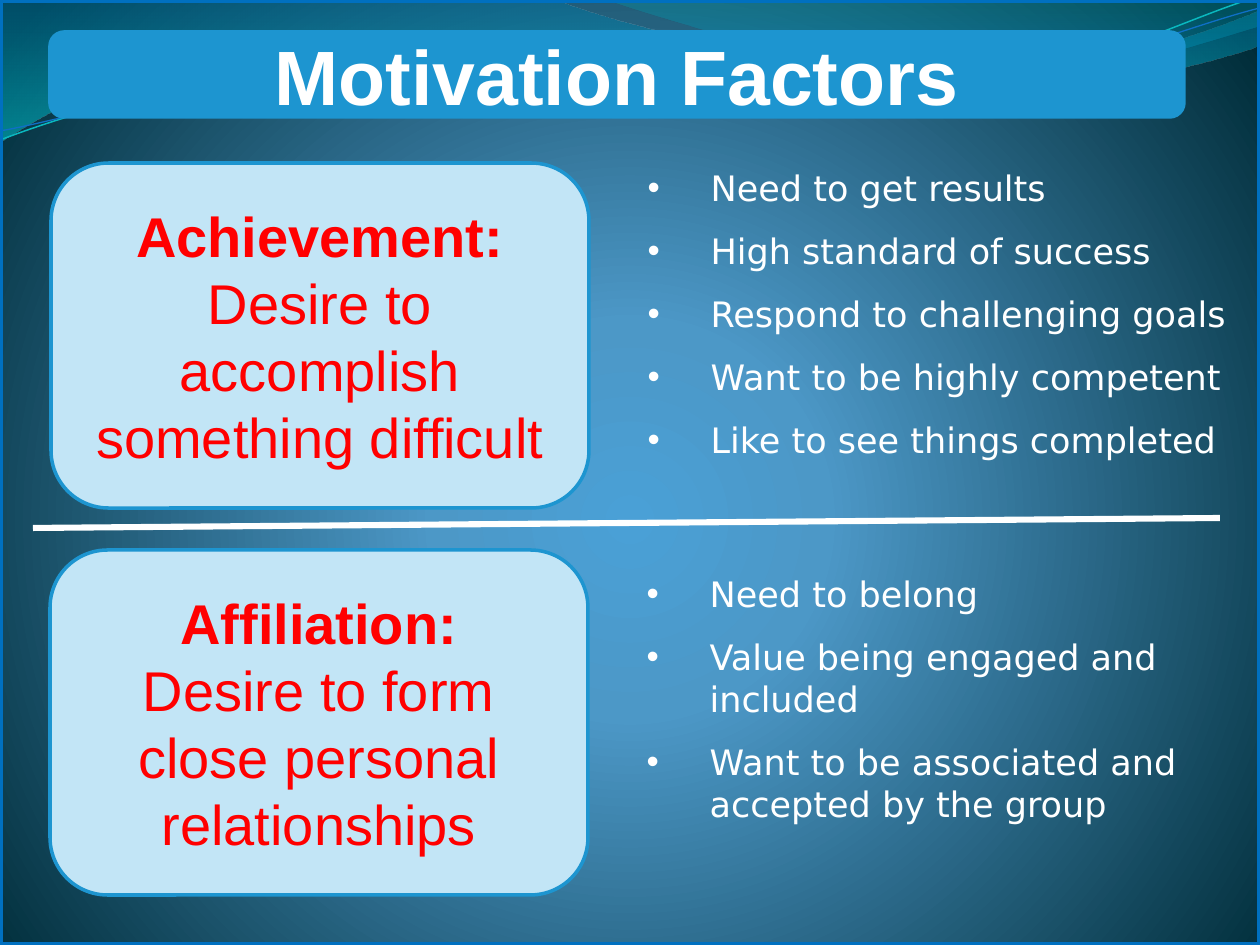
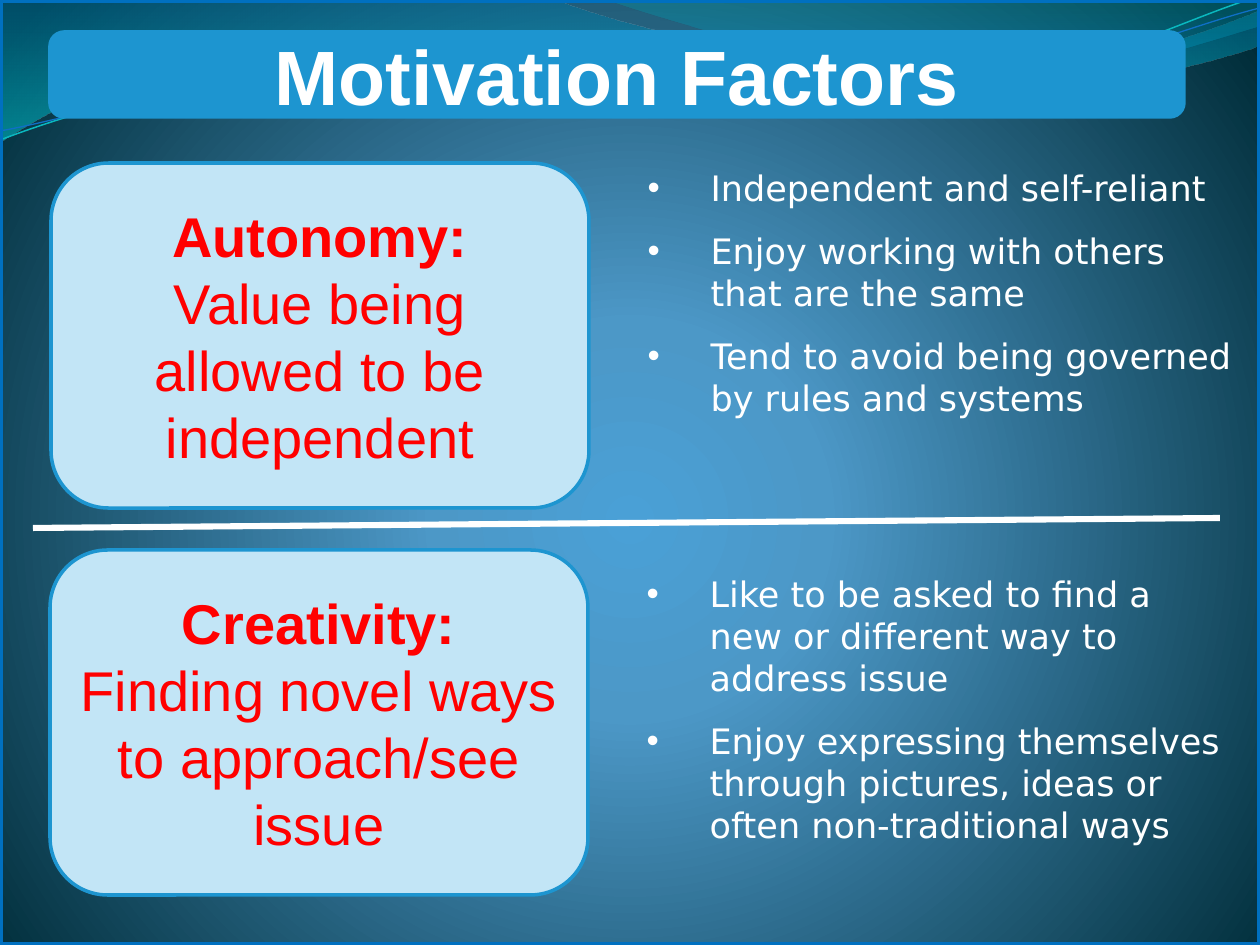
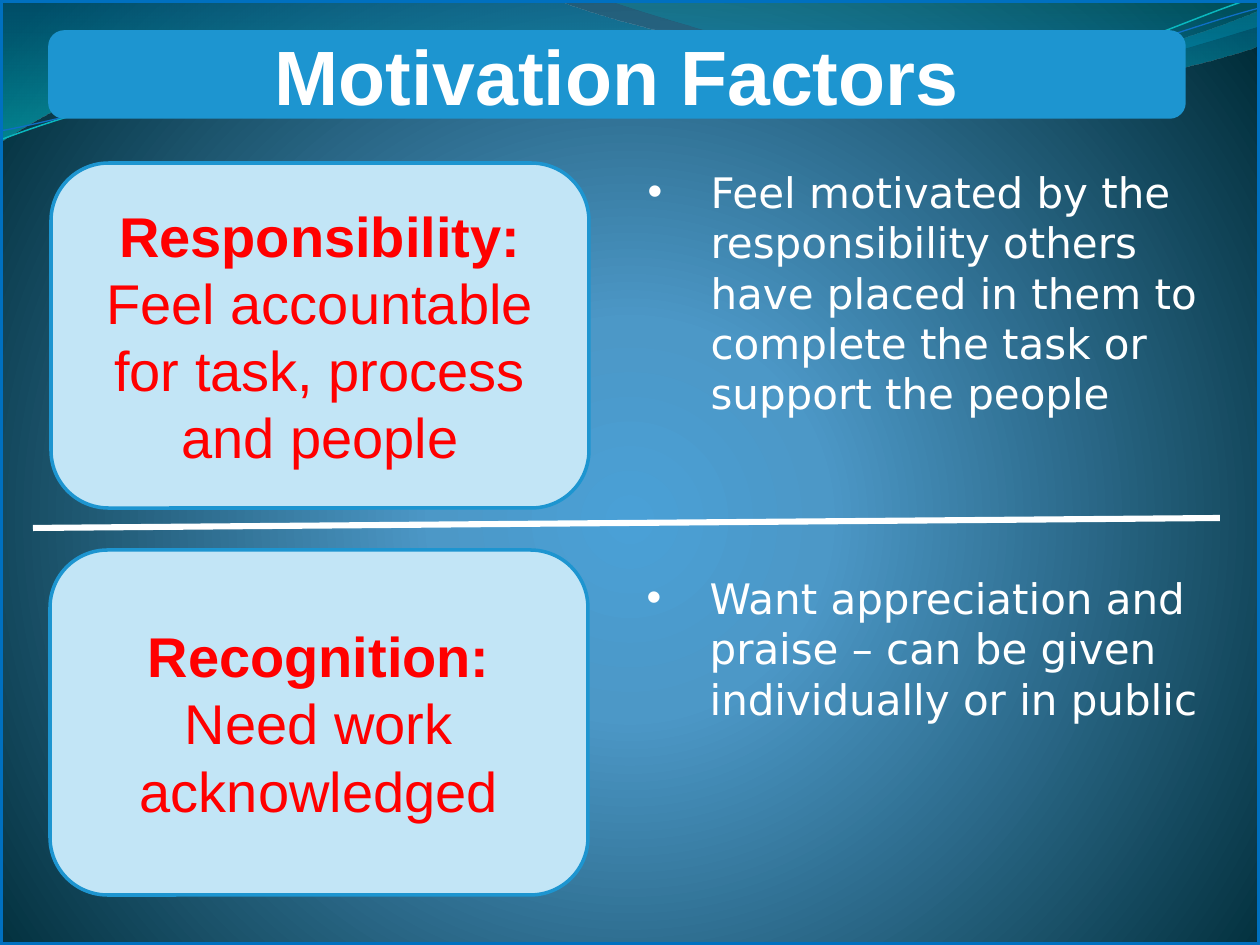
from pptx import Presentation
from pptx.dml.color import RGBColor
from pptx.enum.shapes import MSO_CONNECTOR, MSO_SHAPE
from pptx.enum.text import MSO_ANCHOR, MSO_AUTO_SIZE, PP_ALIGN
from pptx.oxml import parse_xml
from pptx.oxml.ns import nsdecls, qn
from pptx.util import Emu, Pt

ROUNDED, RECT = MSO_SHAPE.ROUNDED_RECTANGLE, MSO_SHAPE.RECTANGLE
STRAIGHT = MSO_CONNECTOR.STRAIGHT
MIDDLE, TOP = MSO_ANCHOR.MIDDLE, MSO_ANCHOR.TOP
CENTER, LEFT = PP_ALIGN.CENTER, PP_ALIGN.LEFT
NO_FIT, GROW = MSO_AUTO_SIZE.NONE, MSO_AUTO_SIZE.SHAPE_TO_FIT_TEXT

PX = 914400 / 126
WIDTH, HEIGHT = 1260, 945
TWO_CONTENT = 3
HEAD_FONT, LIST_FONT = "Arial", "DejaVu Sans"

COLORS = {
    "band": "1D95D0",
    "box": "C2E5F6",
    "factor": "FF0000",
    "frame": "0070C0",
    "white": "FFFFFF",
    "teal_thread": "0AB8BF",
    "blue_thread": "0F6FC6",
}

# Gradient stops: position %, colour, opacity %
BACKGROUND = [(0, "4AA0D6", 100), (25, "4C98C7", 100), (100, "002C38", 100)]
RADIAL = ('<a:path {} path="circle"><a:fillToRect l="10000" t="110000" '
          'r="10000" b="100000"/></a:path>')
DOWNWARD = '<a:lin {} ang="5400000" scaled="0"/>'

# Outlines: a start point, then segments of one point (line) or three (curve)
WAVES = [
    ((0, 0),
     [[(554, -1)],
      [(600, 21), (837, 79), (955, 79)],
      [(1074, 79), (1207, 33), (1260, 11)],
      [(1261, 45)],
      [(1239, 55), (1096, 96), (940, 95)],
      [(784, 95), (481, 35), (324, 43)],
      [(163, 45), (58, 105), (-1, 142)]],
     [(0, "0074A1", 45), (100, "00C6CF", 55)]),
    ((604, -1),
     [[(641, 14), (859, 78), (969, 82)],
      [(1079, 86), (1211, 40), (1260, 26)],
      [(1260, 0)]],
     [(0, "00A1A9", 30), (80, "008BBF", 45)]),
]
THREADS = [
    ((0, 140),
     [[(60, 117), (199, 72), (349, 66)],
      [(498, 59), (747, 112), (898, 101)],
      [(1050, 89), (1182, 19), (1257, -3)]],
     "teal_thread", 0.85),
    ((0, 131),
     [[(59, 121), (207, 77), (357, 71)],
      [(508, 64), (752, 106), (903, 95)],
      [(1053, 84), (1186, 26), (1260, 8)]],
     "blue_thread", 0.75),
]

TITLE_PLACE = (50, 32, 1134, 85)
BOX_PLACES = [(51, 163, 538, 345), (50, 550, 538, 345)]
LIST_PLACES = [(635, 160, 610), (634, 566, 610)]

# Each slide: list text size, then per factor its name, meaning, list height, points
SLIDES = [
    (20, [
        ("Achievement:", "Desire to accomplish something difficult", 310,
         ["Need to get results", "High standard of success",
          "Respond to challenging goals", "Want to be highly competent",
          "Like to see things completed"]),
        ("Affiliation:", "Desire to form close personal relationships", 267,
         ["Need to belong", "Value being engaged and included",
          "Want to be associated and accepted by the group"]),
    ]),
    (20, [
        ("Autonomy:", "Value being allowed to be independent", 267,
         ["Independent and self-reliant",
          "Enjoy working with others that are the same",
          "Tend to avoid being governed by rules and systems"]),
        ("Creativity:", "Finding novel ways to approach/see issue", 289,
         ["Like to be asked to find a new or different way to address issue",
          "Enjoy expressing themselves through pictures, ideas or often "
          "non-traditional ways"]),
    ]),
    (24, [
        ("Responsibility:", "Feel accountable for task, process and people", 267,
         ["Feel motivated by the responsibility others have placed in them to "
          "complete the task or support the people"]),
        ("Recognition:", "Need work\nacknowledged", 165,
         ["Want appreciation and praise – can be given individually or in public"]),
    ]),
]


def px(n):
    return Emu(round(n * PX))


def rgb(name):
    return RGBColor.from_string(COLORS[name])


def place(shape, x, y, w, h):
    shape.left, shape.top, shape.width, shape.height = map(px, (x, y, w, h))


def set_line(shape, color, width):
    shape.line.color.rgb = rgb(color)
    shape.line.width = Pt(width)


def set_gradient(fill, element, stops, shade):
    """Give the fill, held in element, its stops and its direction."""
    fill.gradient()
    grad = next(element.iter(qn("a:gradFill")))
    grad.clear()
    items = "".join(
        f'<a:gs pos="{pos * 1000}"><a:srgbClr val="{color}">'
        f'<a:alpha val="{alpha * 1000}"/></a:srgbClr></a:gs>'
        for pos, color, alpha in stops)
    grad.append(parse_xml(f'<a:gsLst {nsdecls("a")}>{items}</a:gsLst>'))
    grad.append(parse_xml(shade.format(nsdecls("a"))))


def format_text(tf, font, size, color, align, anchor, fit):
    tf.word_wrap = True
    tf.auto_size = fit
    tf.vertical_anchor = anchor
    for p in tf.paragraphs:
        p.alignment = align
        p.font.name = font
        p.font.size = Pt(size)
        p.font.color.rgb = rgb(color)


def add_outline(s, start, segments, close):
    """Build a freeform through the segment ends, then bend its curved segments."""
    builder = s.shapes.build_freeform(*map(px, start))
    builder.add_line_segments([tuple(map(px, seg[-1])) for seg in segments], close=close)
    shape = builder.convert_to_shape()
    shape.shadow.inherit = False
    lines = list(shape.element.iter(qn("a:lnTo")))
    for line, segment in zip(lines, segments):
        if len(segment) == 3:
            points = "".join(
                f'<a:pt x="{px(x) - shape.left}" y="{px(y) - shape.top}"/>'
                for x, y in segment)
            curve = parse_xml(f'<a:cubicBezTo {nsdecls("a")}>{points}</a:cubicBezTo>')
            line.getparent().replace(line, curve)
    return shape


def add_wave(s, start, segments, stops):
    wave = add_outline(s, start, segments, True)
    set_gradient(wave.fill, wave.element, stops, DOWNWARD)
    wave.line.fill.background()
    return wave


def add_thread(s, start, segments, color, width):
    thread = add_outline(s, start, segments, False)
    thread.fill.background()
    set_line(thread, color, width)
    return thread


def add_rounded(s, position, color):
    box = s.shapes.add_shape(ROUNDED, *map(px, position))
    box.shadow.inherit = False
    box.fill.solid()
    box.fill.fore_color.rgb = rgb(color)
    set_line(box, "band", 2)
    return box


def decorate_master(prs, s):
    """Set the background, and move waves and title band drawn on s to the master."""
    master = prs.slide_master
    set_gradient(master.background.fill, master.element, BACKGROUND, RADIAL)
    shapes = [add_wave(s, *wave) for wave in WAVES]
    shapes += [add_thread(s, *thread) for thread in THREADS]
    shapes.append(add_rounded(s, TITLE_PLACE, "band"))
    for shape in shapes:
        master.shapes.element.append(shape.element)


def set_title(s, text):
    title = s.shapes.title
    place(title, *TITLE_PLACE)
    tf = title.text_frame
    tf.text = text
    format_text(tf, HEAD_FONT, 44, "white", CENTER, MIDDLE, NO_FIT)
    tf.paragraphs[0].font.bold = True


def add_frame(s):
    frame = s.shapes.add_shape(RECT, 0, 0, px(WIDTH), px(HEIGHT))
    frame.shadow.inherit = False
    frame.fill.background()
    set_line(frame, "frame", 3.5)


def add_divider(s):
    divider = s.shapes.add_connector(STRAIGHT, px(33), px(528), px(1220), px(518))
    set_line(divider, "white", 3.5)
    divider.element.spPr.append(parse_xml(f'<a:effectLst {nsdecls("a")}/>'))


def add_factor_box(s, position, name, meaning):
    tf = add_rounded(s, position, "box").text_frame
    tf.text = f"{name}\n{meaning}"
    format_text(tf, HEAD_FONT, 32, "factor", CENTER, MIDDLE, NO_FIT)
    tf.paragraphs[0].font.bold = True


def fill_list(body, position, height, points, size):
    place(body, *position, height)
    tf = body.text_frame
    tf.text = "\n".join(points)
    format_text(tf, LIST_FONT, size, "white", LEFT, TOP, GROW)
    for p in tf.paragraphs:
        p.space_before, p.space_after = Pt(0), Pt(12)
        pPr = p._p.get_or_add_pPr()
        pPr.set("marL", str(px(63)))
        pPr.set("indent", str(-px(63)))


def add_factor_slide(prs, size, factors):
    s = prs.slides.add_slide(prs.slide_layouts[TWO_CONTENT])
    set_title(s, "Motivation Factors")
    add_frame(s)
    add_divider(s)
    bodies = list(s.placeholders)[1:]
    for body, box_at, list_at, factor in zip(bodies, BOX_PLACES, LIST_PLACES, factors):
        name, meaning, height, points = factor
        add_factor_box(s, box_at, name, meaning)
        fill_list(body, list_at, height, points, size)
    return s


def main():
    prs = Presentation()
    prs.slide_width, prs.slide_height = px(WIDTH), px(HEIGHT)
    slides = [add_factor_slide(prs, size, factors) for size, factors in SLIDES]
    decorate_master(prs, slides[0])
    prs.save("out.pptx")


if __name__ == "__main__":
    main()
